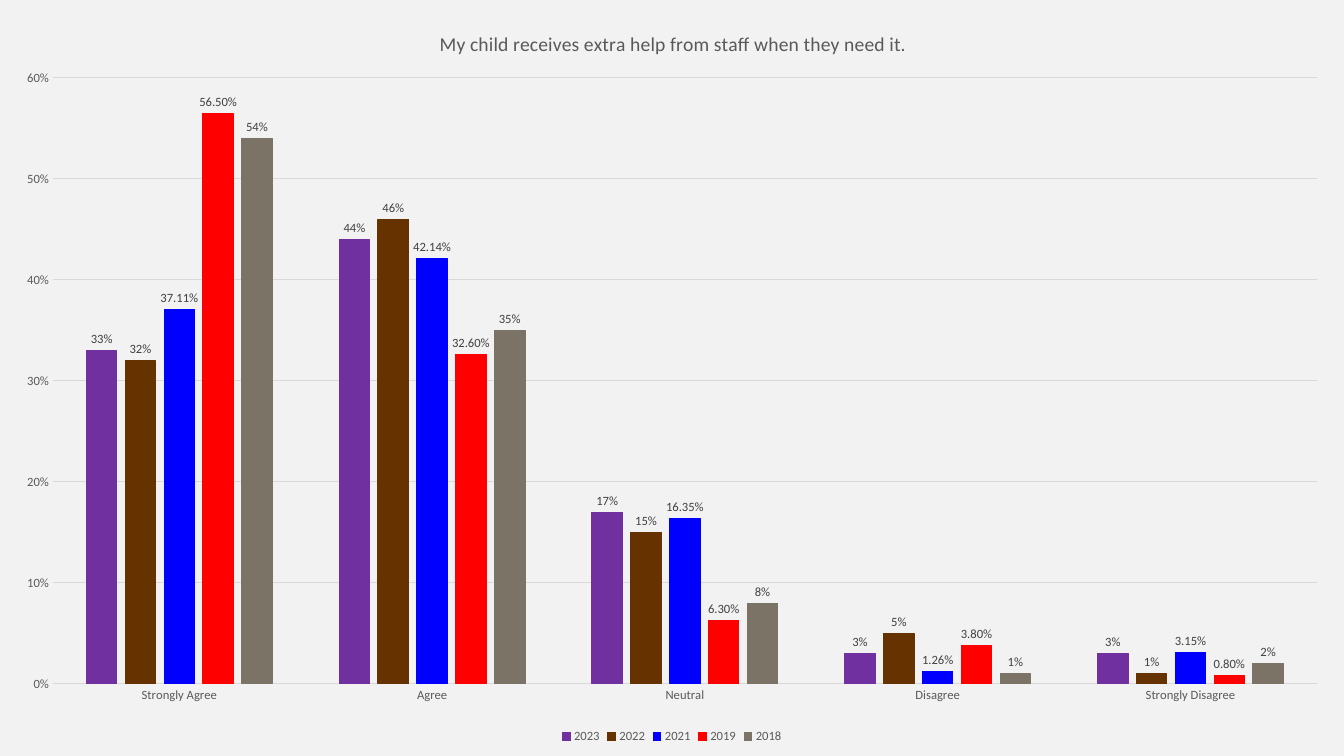
"""Builds a survey slide with one clustered column chart."""
from lxml.etree import SubElement
from pptx import Presentation
from pptx.chart.data import CategoryChartData
from pptx.dml.color import RGBColor
from pptx.enum.chart import XL_CHART_TYPE, XL_LABEL_POSITION, XL_LEGEND_POSITION, XL_TICK_MARK
from pptx.oxml.ns import qn
from pptx.util import Emu, Pt

TITLE = "My child receives extra help from staff when they need it."
ANSWERS = ["Strongly Agree", "Agree", "Neutral", "Disagree", "Strongly Disagree"]
YEARS = [
    ("2023", "7030A0", "0%", [0.33, 0.44, 0.17, 0.03, 0.03]),
    ("2022", "663300", "0%", [0.32, 0.46, 0.15, 0.05, 0.01]),
    ("2021", "0000FF", "0.00%", [0.3711, 0.4214, 0.1635, 0.0126, 0.0315]),
    ("2019", "FF0000", "0.00%", [0.565, 0.326, 0.063, 0.038, 0.008]),
    ("2018", "7B7366", "0%", [0.54, 0.35, 0.08, 0.01, 0.02]),
]
BACKGROUND, GRID, GREY, DARK = "F2F2F2", "D9D9D9", "595959", "404040"
SLIDE_W, SLIDE_H, CHART_H = 1344, 756, 748
TITLE_AT = {"x": 436, "y": 27}
PLOT_AT = {"x": 53, "y": 78, "w": 1264, "h": 606}


def px(n):
    return Emu(round(n * 12192000 / SLIDE_W))


def rgb(code):
    return RGBColor.from_string(code)


def set_font(font, size, color):
    for name, value in {"name": "Calibri", "size": Pt(size), "bold": False}.items():
        setattr(font, name, value)
    font.color.rgb = rgb(color)


def set_line(line, color):
    line.color.rgb = rgb(color)
    line.width = Pt(0.75)


def place(layout, box, inner=False):
    for child in list(layout):
        layout.remove(child)
    manual = SubElement(layout, qn("c:manualLayout"))
    if inner:
        SubElement(manual, qn("c:layoutTarget")).set("val", "inner")
    for key in "xy":
        SubElement(manual, qn(f"c:{key}Mode")).set("val", "edge")
    for key, length in box.items():
        total = SLIDE_W if key in "xw" else CHART_H
        SubElement(manual, qn(f"c:{key}")).set("val", str(round(length / total, 4)))


def get_layout(parent, index):
    layout = parent.find(qn("c:layout"))
    if layout is None:
        layout = SubElement(parent, qn("c:layout"))
        parent.insert(index, layout)
    return layout


def add_survey_chart(s):
    data = CategoryChartData(number_format="0%")
    data.categories = ANSWERS
    for year, _, fmt, values in YEARS:
        data.add_series(year, values, number_format=fmt)
    chart = s.shapes.add_chart(
        XL_CHART_TYPE.COLUMN_CLUSTERED, 0, 0, px(SLIDE_W), px(CHART_H), data).chart
    set_font(chart.font, 10, "000000")

    chart.has_title = True
    r = chart.chart_title.text_frame.paragraphs[0].add_run()
    r.text = TITLE
    set_font(r.font, 14, GREY)
    chart.chart_title.include_in_layout = False
    title = chart.chart_title.element if hasattr(chart.chart_title, "element") else None
    if title is None:
        title = next(chart.element.iter(qn("c:title")))
    place(get_layout(title, 1), TITLE_AT)
    place(get_layout(next(chart.element.iter(qn("c:plotArea"))), 0), PLOT_AT, True)

    chart.has_legend = True
    chart.legend.position = XL_LEGEND_POSITION.BOTTOM
    chart.legend.include_in_layout = False
    set_font(chart.legend.font, 9, GREY)

    for axis in (chart.category_axis, chart.value_axis):
        axis.major_tick_mark = axis.minor_tick_mark = XL_TICK_MARK.NONE
        set_font(axis.tick_labels.font, 9, GREY)
    set_line(chart.category_axis.format.line, GRID)
    axis = chart.value_axis
    axis.minimum_scale, axis.maximum_scale, axis.major_unit = 0, 0.6, 0.1
    axis.format.line.fill.background()
    set_line(axis.major_gridlines.format.line, GRID)
    axis.tick_labels.number_format = "0%"
    axis.tick_labels.number_format_is_linked = False

    plot = chart.plots[0]
    plot.gap_width, plot.overlap, plot.vary_by_categories = 219, -27, False
    for series, (_, color, fmt, _) in zip(plot.series, YEARS):
        series.format.fill.solid()
        series.format.fill.fore_color.rgb = rgb(color)
        set_line(series.format.line, color)
        labels = series.data_labels
        formats = {"show_value": True, "position": XL_LABEL_POSITION.OUTSIDE_END,
                   "number_format": fmt, "number_format_is_linked": False}
        for name, value in formats.items():
            setattr(labels, name, value)
        set_font(labels.font, 9, DARK)


def main():
    prs = Presentation()
    prs.slide_width, prs.slide_height = px(SLIDE_W), px(SLIDE_H)
    s = prs.slides.add_slide(prs.slide_layouts[6])
    s.background.fill.solid()
    s.background.fill.fore_color.rgb = rgb(BACKGROUND)
    add_survey_chart(s)
    prs.save("out.pptx")


if __name__ == "__main__":
    main()
